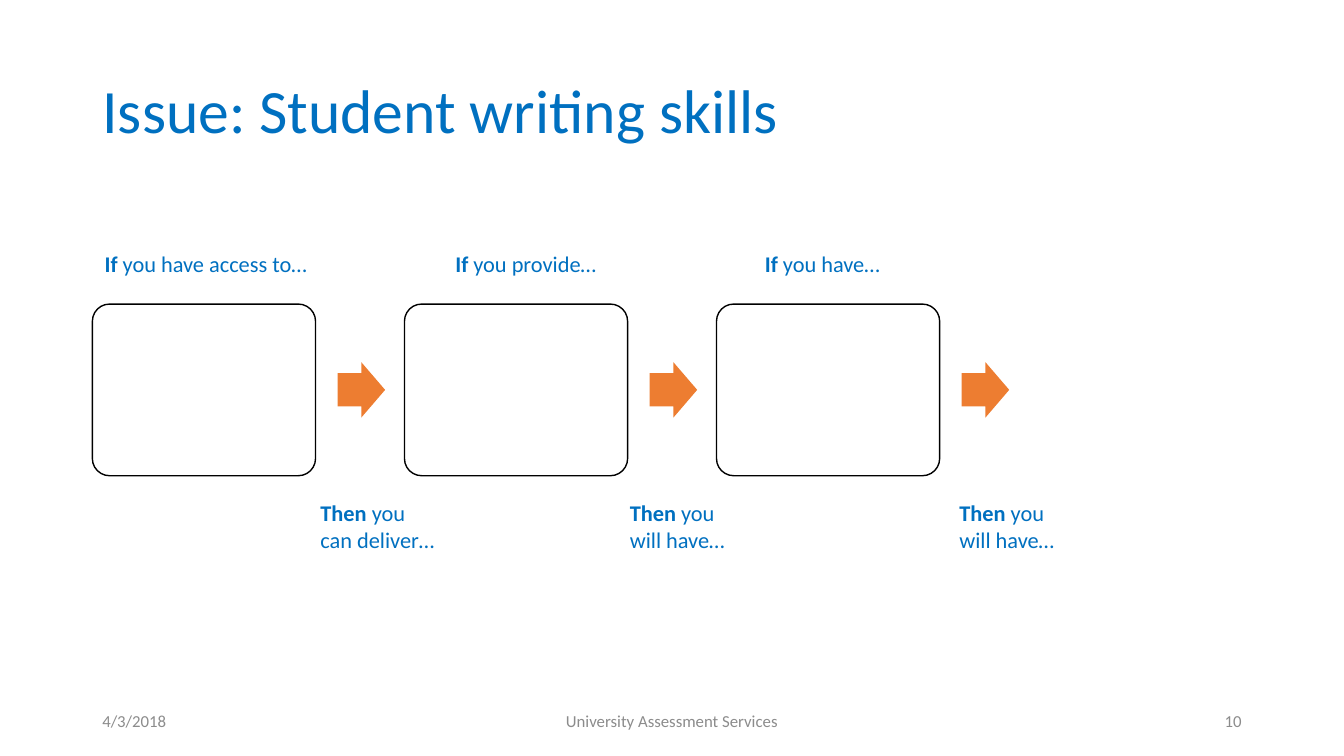
"""Build the slide on student writing skills as a chain of three if-then steps."""
from pptx import Presentation
from pptx.dml.color import RGBColor
from pptx.enum.shapes import MSO_SHAPE as Kind
from pptx.enum.text import MSO_ANCHOR as Anchor, MSO_AUTO_SIZE as Fit, PP_ALIGN as Align
from pptx.util import Pt

FONT, BLUE, GRAY, ORANGE = "Calibri", "0070C0", "8C8C8C", "ED7D31"
TITLE = "Issue: Student writing skills"
STEPS = [
    (" you have access to…", 67.7, 165.6, [" you", "can deliver…"], 221.8),
    (" you provide…", 318.2, 124.6, [" you", "will have…"], 442.8),
    (" you have…", 539.3, 124.6, [" you", "will have…"], 678.2),
]
FOOTER = [
    ("4/3/2018", 66, 216, Align.LEFT),
    ("University Assessment Services", 318, 324, Align.CENTER),
    ("10", 678, 216, Align.RIGHT),
]
LEFT, STEP = 66, 222.9
BOX_TOP, BOX_W, BOX_H = 217.2, 159.4, 122.6
GAP, ARROW_W, ARROW_H = 15.7, 34, 39.6


def color(code):
    return RGBColor.from_string(code)


def style(run, size, code, bold=False):
    font = run.font
    font.name, font.size, font.bold = FONT, Pt(size), bold
    font.color.rgb = color(code)


def add_text(x, y, w, h):
    frame = slide.shapes.add_textbox(Pt(x), Pt(y), Pt(w), Pt(h)).text_frame
    frame.word_wrap = True
    return frame


def add_claim(word, lines, x, y, w, h):
    frame = add_text(x, y, w, h)
    frame.text = "\n".join(["", *lines[1:]])
    first = frame.paragraphs[0]
    style(first.add_run(), 16, BLUE, True)
    first.runs[0].text = word
    first.add_run().text = lines[0]
    for run in [first.runs[1]] + [r for p in frame.paragraphs[1:] for r in p.runs]:
        style(run, 16, BLUE)


def add_block(kind, x, y, w, h, fill, line=None):
    shape = slide.shapes.add_shape(kind, Pt(x), Pt(y), Pt(w), Pt(h))
    shape.shadow.inherit = False
    shape.fill.solid()
    shape.fill.fore_color.rgb = color(fill)
    if line:
        shape.line.color.rgb = color(line)
        shape.line.width = Pt(1)
    else:
        shape.line.fill.background()
    return shape


deck = Presentation()
deck.slide_width, deck.slide_height = Pt(960), Pt(540)
slide = deck.slides.add_slide(deck.slide_layouts[5])

title = slide.shapes.title
title.left, title.top, title.width, title.height = Pt(66), Pt(28.8), Pt(828), Pt(104.4)
head = title.text_frame
head.text = TITLE
head.auto_size, head.vertical_anchor = Fit.NONE, Anchor.MIDDLE
head.paragraphs[0].alignment = Align.LEFT
head.paragraphs[0].line_spacing = 0.9
style(head.paragraphs[0].runs[0], 44, BLUE)

for i, (cause, if_x, if_w, effect, then_x) in enumerate(STEPS):
    x = LEFT + i * STEP
    box = add_block(Kind.ROUNDED_RECTANGLE, x, BOX_TOP, BOX_W, BOX_H, "FFFFFF", "000000")
    box.adjustments[0] = 0.1
    mid = BOX_TOP + BOX_H / 2
    arrow = add_block(Kind.RIGHT_ARROW, x + BOX_W + GAP, mid - ARROW_H / 2,
                      ARROW_W, ARROW_H, ORANGE)
    arrow.adjustments[0], arrow.adjustments[1] = 0.6, 0.5
    add_claim("If", [cause], if_x, 175, if_w, 26.6)
    add_claim("Then", effect, then_x, 352.8, 144.7, 46)

for text, x, w, align in FOOTER:
    frame = add_text(x, 500.4, w, 28.8)
    frame.text = text
    frame.vertical_anchor = Anchor.MIDDLE
    frame.paragraphs[0].alignment = align
    style(frame.paragraphs[0].runs[0], 12, GRAY)

deck.save("out.pptx")
